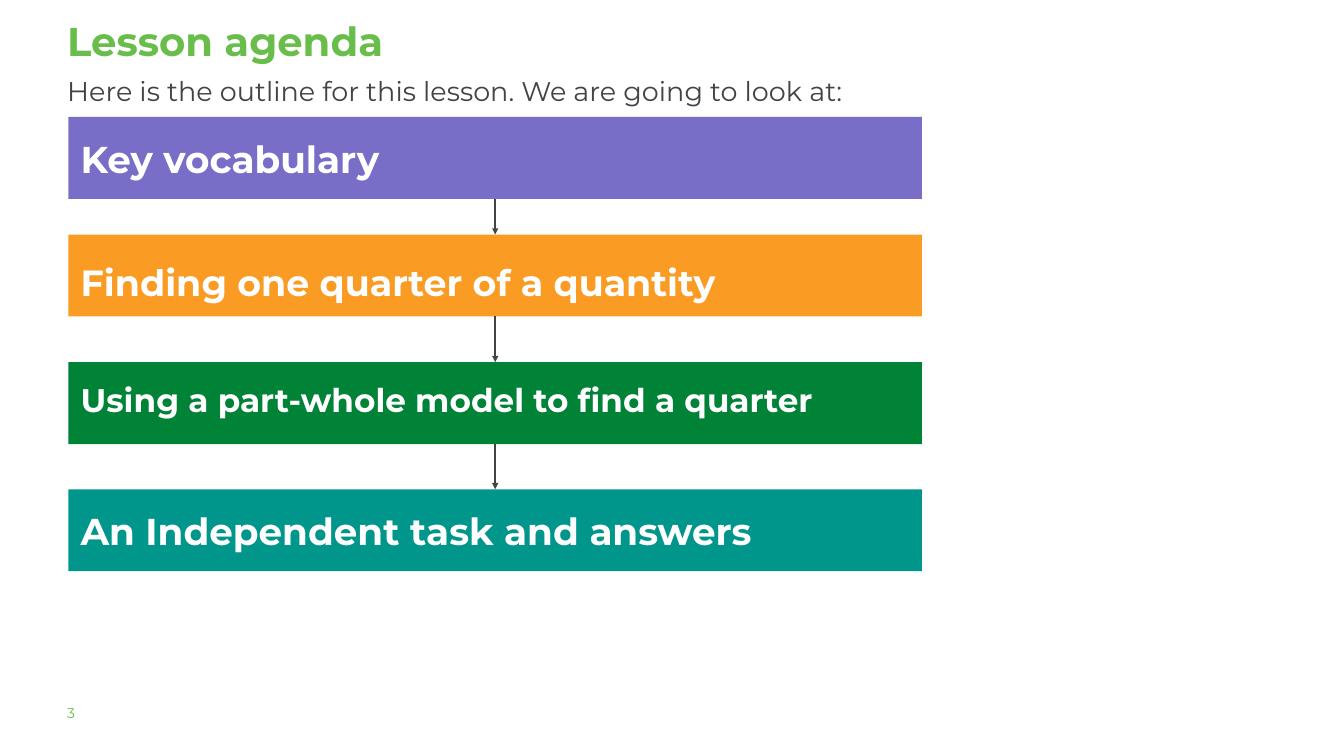
"""Build the lesson agenda slide: four steps joined by arrows."""
from itertools import pairwise

from lxml.etree import SubElement
from pptx import Presentation
from pptx.dml.color import RGBColor
from pptx.enum.shapes import MSO_CONNECTOR, MSO_SHAPE
from pptx.enum.text import MSO_ANCHOR, PP_ALIGN
from pptx.oxml.ns import qn
from pptx.util import Pt

TEXTS = [
    {"text": "Lesson agenda", "box": (72, 9.4, 1295.3, 90), "style": "title", "spacing": 1.15},
    {"text": "Here is the outline for this lesson. We are going to look at:",
     "box": (72, 69.8, 953.3, 55.4), "style": "intro", "spacing": 1.3},
    {"text": "3", "box": (72, 755.3, 113, 28.1), "style": "number", "spacing": 1},
]
STEPS = [
    {"text": "Key vocabulary", "top": 125.3, "fill": "purple", "size": 40},
    {"text": "Finding one quarter of a quantity", "top": 251.3, "fill": "orange", "size": 39,
     "spacing": 1.3, "anchor": MSO_ANCHOR.MIDDLE},
    {"text": "Using a part-whole model to find a quarter", "top": 388, "fill": "green", "size": 35},
    {"text": "An Independent task and answers", "top": 524.2, "fill": "teal", "size": 40},
]
THEME = {
    "font": "Montserrat",
    "title": (43, "69BE4B", True),
    "intro": (29, "434343", False),
    "number": (15, "65BE4B", False),
    "step": ("FFFFFF", True),
    "arrow": ("434343", 2.25),
    "purple": "786EC8",
    "orange": "FA9B23",
    "green": "008237",
    "teal": "00968C",
}
STEP_LEFT, STEP_WIDTH, STEP_HEIGHT, STEP_INSET = 73.4, 914.4, 87.8, 13


def write_text(shape, text, style, spacing, inset=0, anchor=MSO_ANCHOR.TOP):
    size, color, bold = style
    frame = shape.text_frame
    frame.text = text
    frame.word_wrap = True
    frame.vertical_anchor = anchor
    frame.margin_left = frame.margin_right = Pt(inset)
    frame.margin_top = frame.margin_bottom = Pt(inset)
    paragraph = frame.paragraphs[0]
    paragraph.alignment = PP_ALIGN.LEFT
    paragraph.line_spacing = spacing
    font = paragraph.runs[0].font
    font.name = THEME["font"]
    font.size = Pt(size)
    font.bold = bold
    font.color.rgb = RGBColor.from_string(color)


def add_step(slide, step):
    shape = slide.shapes.add_shape(
        MSO_SHAPE.RECTANGLE, Pt(STEP_LEFT), Pt(step["top"]), Pt(STEP_WIDTH), Pt(STEP_HEIGHT))
    shape.shadow.inherit = False
    shape.fill.solid()
    shape.fill.fore_color.rgb = RGBColor.from_string(THEME[step["fill"]])
    shape.line.fill.background()
    write_text(shape, step["text"], (step["size"], *THEME["step"]), step.get("spacing", 1.15),
               STEP_INSET, step.get("anchor", MSO_ANCHOR.TOP))
    return shape


def add_arrow(slide, upper, lower):
    color, width = THEME["arrow"]
    arrow = slide.shapes.add_connector(MSO_CONNECTOR.STRAIGHT, 0, 0, 0, 0)
    arrow.begin_connect(upper, 2)
    arrow.end_connect(lower, 0)
    arrow.line.color.rgb = RGBColor.from_string(color)
    arrow.line.width = Pt(width)
    SubElement(arrow.line._get_or_add_ln(), qn("a:tailEnd"), type="triangle")
    SubElement(arrow._element.spPr, qn("a:effectLst"))


def main():
    presentation = Presentation()
    presentation.slide_width, presentation.slide_height = Pt(1440), Pt(810)
    slide = presentation.slides.add_slide(presentation.slide_layouts[6])
    for item in TEXTS:
        box = slide.shapes.add_textbox(*map(Pt, item["box"]))
        write_text(box, item["text"], THEME[item["style"]], item["spacing"])
    steps = [add_step(slide, step) for step in STEPS]
    for upper, lower in pairwise(steps):
        add_arrow(slide, upper, lower)
    presentation.save("out.pptx")


if __name__ == "__main__":
    main()
